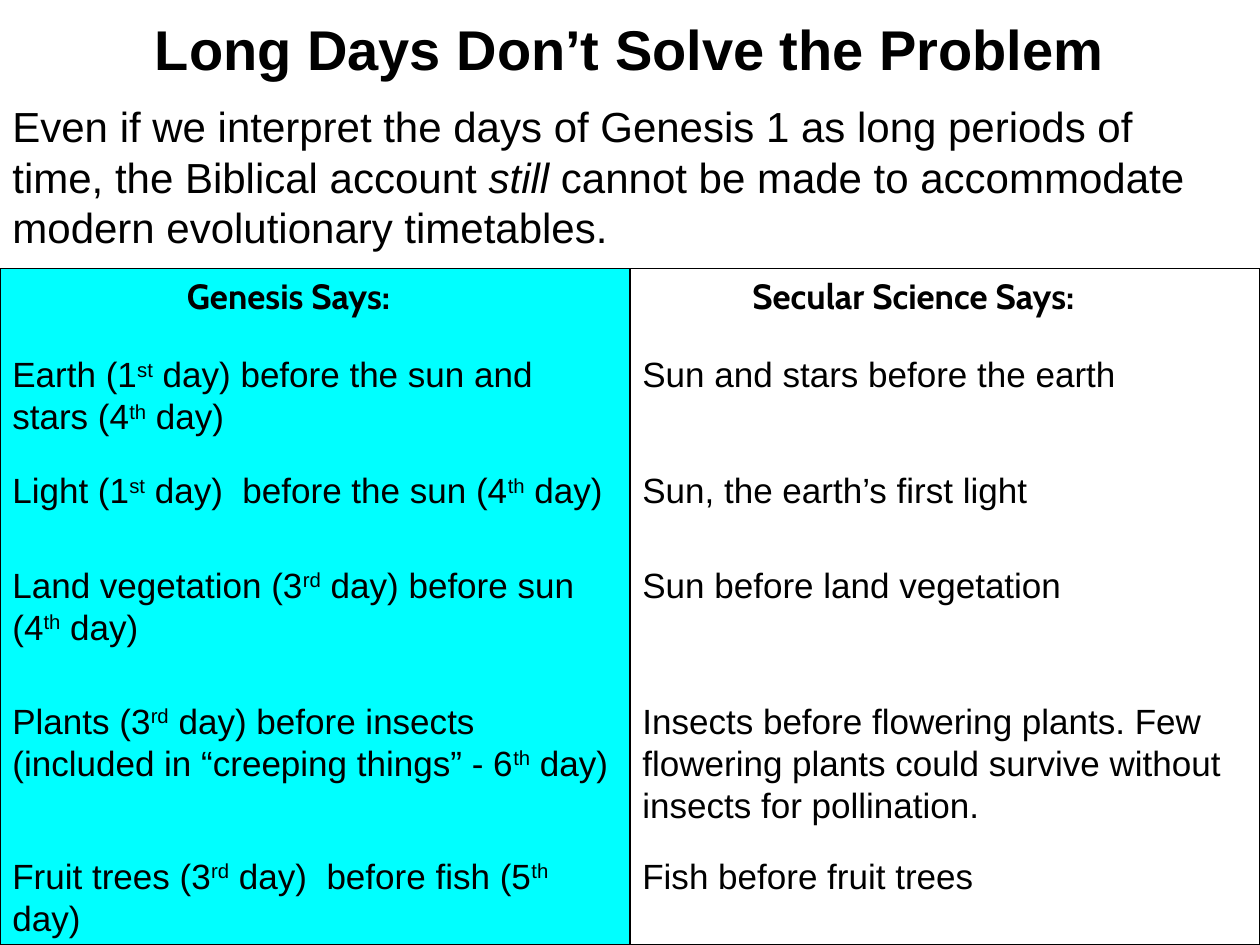
from dataclasses import dataclass

from pptx import Presentation
from pptx import util as u
from pptx.dml.color import RGBColor
from pptx.enum import shapes, text

BLACK = RGBColor(0x00, 0x00, 0x00)
WHITE = RGBColor(0xFF, 0xFF, 0xFF)
CYAN = RGBColor(0x00, 0xFF, 0xFF)

WIDTH, HEIGHT = 10, 7.5
COLUMN = WIDTH / 2
PANEL_TOP = 2.13
LINE = 0.33      # height of one 20 pt line
PADDING = 0.1    # top and bottom insets together


@dataclass
class Column:
    heading: str
    heading_width: float
    fill: RGBColor


@dataclass
class Comparison:
    top: float
    claims: tuple[str, str]    # ^marks^ enclose superscripts
    lines: tuple[int, int]


COLUMNS = [
    Column("Genesis Says:", 4.58, CYAN),
    Column("Secular Science Says:", 4.5, WHITE),
]
COMPARISONS = [
    Comparison(2.75, ("Earth (1^st^ day) before the sun and stars (4^th^ day)",
                      "Sun and stars before the earth"), (2, 1)),
    Comparison(3.67, ("Light (1^st^ day)  before the sun (4^th^ day)",
                      "Sun, the earth’s first light"), (1, 1)),
    Comparison(4.42, ("Land vegetation (3^rd^ day) before sun (4^th^ day)",
                      "Sun before land vegetation"), (2, 1)),
    Comparison(5.5, ("Plants (3^rd^ day) before insects (included in “creeping things” - 6^th^ day)",
                     "Insects before flowering plants. Few flowering plants could survive "
                     "without insects for pollination."), (2, 3)),
    Comparison(6.73, ("Fruit trees (3^rd^ day)  before fish (5^th^ day)",
                      "Fish before fruit trees"), (2, 1)),
]


def write(frame, content: str, *, size=20, font="Arial", bold=False,
          align=text.PP_ALIGN.LEFT, anchor=text.MSO_ANCHOR.TOP, after=0) -> None:
    """Write one paragraph; ^x^ is superscript and *x* is italic."""
    frame.word_wrap = True
    frame.auto_size = text.MSO_AUTO_SIZE.NONE
    frame.vertical_anchor = anchor
    para = frame.paragraphs[0]
    para.alignment = align
    para.space_after = u.Pt(after)
    for i, piece in enumerate(content.split("^")):
        for j, part in enumerate(piece.split("*")):
            if not part:
                continue
            span = para.add_run()
            span.text = part
            span.font.size, span.font.name = u.Pt(size), font
            span.font.bold, span.font.italic = bold, j % 2 == 1
            span.font.color.rgb = BLACK
            if i % 2:
                span.font._element.set("baseline", "30000")


def add_text(page, left: float, top: float, width: float, height: float,
             content: str, **style) -> None:
    box = page.shapes.add_textbox(*map(u.Inches, (left, top, width, height)))
    write(box.text_frame, content, **style)


def add_panel(page, left: float, column: Column) -> None:
    panel = page.shapes.add_shape(
        shapes.MSO_SHAPE.RECTANGLE,
        *map(u.Inches, (left, PANEL_TOP, COLUMN, HEIGHT - PANEL_TOP)))
    panel.shadow.inherit = False
    panel.fill.solid()
    panel.fill.fore_color.rgb = column.fill
    panel.line.color.rgb = BLACK
    panel.line.width = u.Pt(0.75)


def main() -> None:
    deck = Presentation()
    deck.slide_width, deck.slide_height = u.Inches(WIDTH), u.Inches(HEIGHT)
    page = deck.slides.add_slide(deck.slide_layouts[5])

    # Title and introduction
    title = page.shapes.title
    title.left, title.top, title.width, title.height = map(u.Inches, (0.75, 0.17, 8.5, 0.42))
    write(title.text_frame, "Long Days Don’t Solve the Problem", size=32, bold=True,
          align=text.PP_ALIGN.CENTER, anchor=text.MSO_ANCHOR.MIDDLE)
    add_text(page, 0, 0.75, 9.58, 1.3,
             "Even if we interpret the days of Genesis 1 as long periods of time, "
             "the Biblical account *still* cannot be made to accommodate modern "
             "evolutionary timetables.", size=24, after=6)

    # Two panels with their headings and claims
    for index, column in enumerate(COLUMNS):
        left = index * COLUMN
        add_panel(page, left, column)
        add_text(page, left, PANEL_TOP, column.heading_width, LINE + PADDING, column.heading,
                 font="Cabin", bold=True, align=text.PP_ALIGN.CENTER)
        for row in COMPARISONS:
            add_text(page, left, row.top, COLUMN, row.lines[index] * LINE + PADDING,
                     row.claims[index])

    deck.save("out.pptx")


if __name__ == "__main__":
    main()
